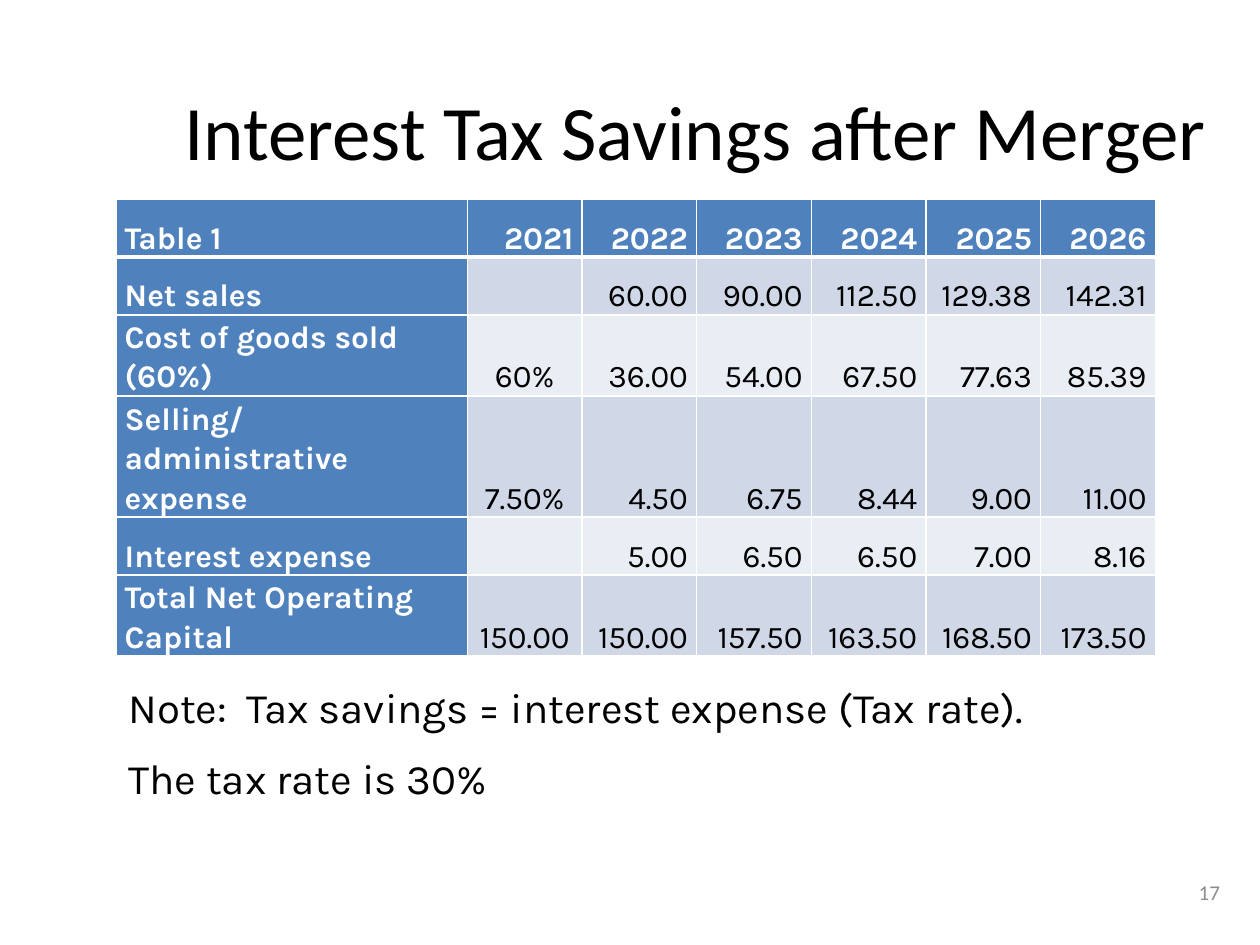
from dataclasses import dataclass

from lxml import etree
from pptx import Presentation
from pptx.dml.color import RGBColor
from pptx.enum.text import MSO_ANCHOR, MSO_AUTO_SIZE, PP_ALIGN
from pptx.oxml.ns import qn
from pptx.util import Inches, Pt

LEFT, CENTER, RIGHT = PP_ALIGN.LEFT, PP_ALIGN.CENTER, PP_ALIGN.RIGHT
MIDDLE, BOTTOM = MSO_ANCHOR.MIDDLE, MSO_ANCHOR.BOTTOM
FIT_SHAPE = MSO_AUTO_SIZE.SHAPE_TO_FIT_TEXT
TITLE_ONLY = 5


@dataclass(frozen=True)
class Theme:
    heading_font: str = "Calibri"
    body_font: str = "Karla"
    title_size: int = 44
    note_size: int = 24
    table_size: int = 18
    number_size: int = 12
    black: str = "000000"
    white: str = "FFFFFF"
    gray: str = "8C8C8C"
    header: str = "4F81BD"
    bands: tuple = ("E9EDF4", "D0D8E8")


THEME = Theme()

ROWS = [
    ["Table 1", "2021", "2022", "2023", "2024", "2025", "2026"],
    ["Net sales", "", "60.00", "90.00", "112.50", "129.38", "142.31"],
    ["Cost of goods sold (60%)", "60%", "36.00", "54.00", "67.50", "77.63", "85.39"],
    ["Selling/administrative expense", "7.50%", "4.50", "6.75", "8.44", "9.00", "11.00"],
    ["Interest expense", "", "5.00", "6.50", "6.50", "7.00", "8.16"],
    ["Total Net Operating Capital", "150.00", "150.00", "157.50", "163.50", "168.50", "173.50"],
]
NOTES = ["Note:  Tax savings = interest expense (Tax rate).", "The tax rate is 30%"]


def add_run(p, text, size, font, color, bold=False):
    r = p.add_run()
    r.text = text
    r.font.size = Pt(size)
    r.font.name = font
    r.font.bold = bold
    r.font.color.rgb = RGBColor.from_string(color)


def place(sp, left, top, width, height):
    sp.left, sp.top = Inches(left), Inches(top)
    sp.width, sp.height = Inches(width), Inches(height)


def add_title(s, text):
    sp = s.shapes.title
    place(sp, 1.26, 0.23, 8.52, 1.6)
    tf = sp.text_frame
    tf.vertical_anchor = MIDDLE
    p = tf.paragraphs[0]
    p.alignment = CENTER
    add_run(p, text, THEME.title_size, THEME.heading_font, THEME.black)


def add_text_box(s, box, lines, size, font, color, align=LEFT, space_before=0):
    tf = s.shapes.add_textbox(*map(Inches, box)).text_frame
    tf.word_wrap = True
    for i, line in enumerate(lines):
        p = tf.paragraphs[0] if i == 0 else tf.add_paragraph()
        p.alignment = align
        p.space_before = Pt(space_before)
        add_run(p, line, size, font, color)
    return tf


def set_borders(cell, color, **widths):
    tc_pr = cell._tc.get_or_add_tcPr()
    for i, side in enumerate("LRTB"):
        ln = etree.Element(qn(f"a:ln{side}"), w=str(Pt(widths.get(side, 1))))
        fill = etree.SubElement(ln, qn("a:solidFill"))
        etree.SubElement(fill, qn("a:srgbClr"), val=color)
        tc_pr.insert(i, ln)


def fill_cell(cell, text, row, col):
    heading = row == 0 or col == 0
    cell.margin_left = cell.margin_right = Inches(0.07)
    cell.margin_top = cell.margin_bottom = 0
    cell.vertical_anchor = BOTTOM
    cell.fill.solid()
    cell.fill.fore_color.rgb = RGBColor.from_string(
        THEME.header if heading else THEME.bands[row % 2])
    set_borders(cell, THEME.white, T=3 if row == 1 else 1, B=3 if row == 0 else 1)
    p = cell.text_frame.paragraphs[0]
    p.line_spacing = 1.07
    if col == 0:
        p.alignment = LEFT
    else:
        p.alignment = CENTER if col == 1 and row > 0 else RIGHT
    if text:
        add_run(p, text, THEME.table_size, THEME.body_font,
                THEME.white if heading else THEME.black, heading)
    else:
        p.font.size = Pt(THEME.table_size)


def add_data_table(s, rows):
    row_height, label_width, value_width = 0.46, 2.79, 0.91
    n_rows, n_cols = len(rows), len(rows[0])
    table = s.shapes.add_table(
        n_rows, n_cols, Inches(0.92), Inches(1.58),
        Inches(label_width + value_width * (n_cols - 1)),
        Inches(row_height * n_rows)).table
    for col, column in enumerate(table.columns):
        column.width = Inches(value_width if col else label_width)
    for row, values in enumerate(rows):
        table.rows[row].height = Inches(row_height)
        for col, text in enumerate(values):
            fill_cell(table.cell(row, col), text, row, col)


def main():
    prs = Presentation()
    prs.slide_width, prs.slide_height = Inches(10), Inches(7.5)
    s = prs.slides.add_slide(prs.slide_layouts[TITLE_ONLY])
    add_title(s, "Interest Tax Savings after Merger")
    number = add_text_box(s, (7.7, 6.83, 2.08, 0.5), ["17"], THEME.number_size,
                          THEME.heading_font, THEME.gray, RIGHT)
    number.vertical_anchor = MIDDLE
    notes = add_text_box(s, (0.92, 5.36, 9.25, 1.11), NOTES, THEME.note_size,
                         THEME.body_font, THEME.black, space_before=12)
    notes.auto_size = FIT_SHAPE
    add_data_table(s, ROWS)
    prs.save("out.pptx")


if __name__ == "__main__":
    main()
